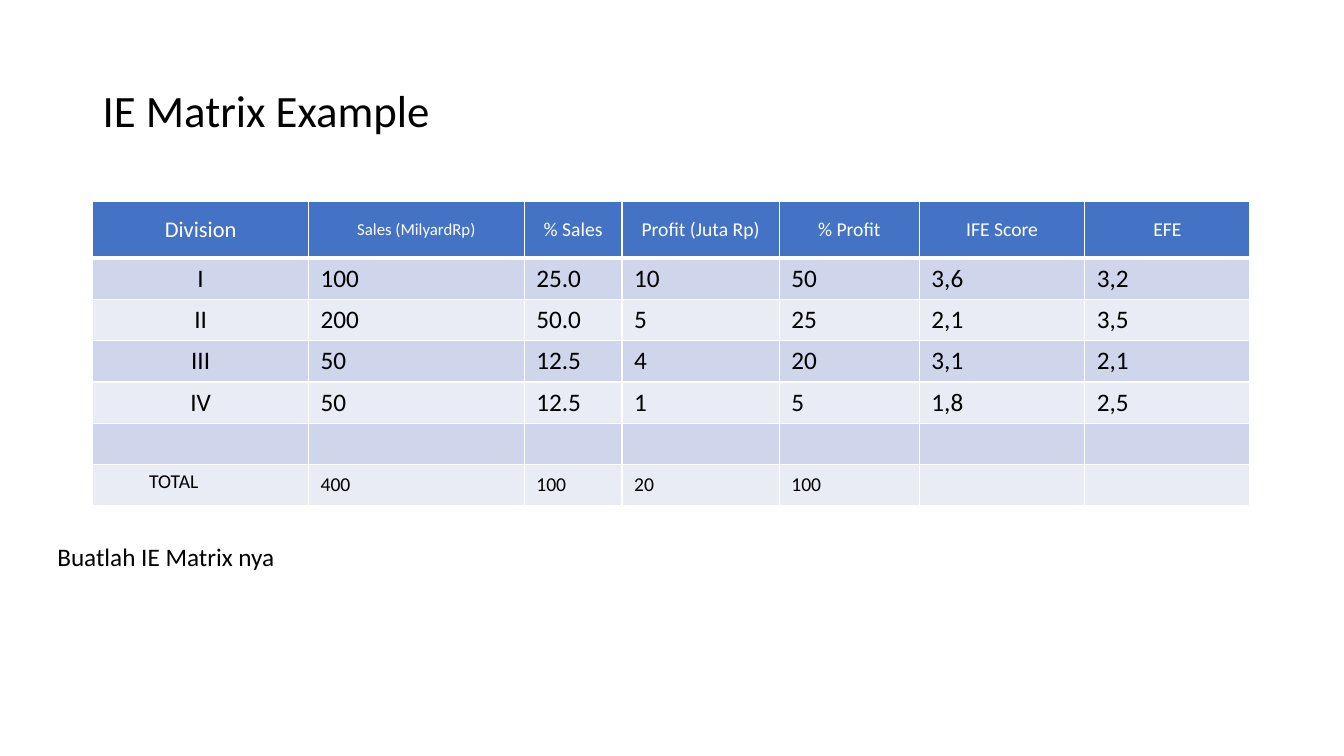
"""Build the IE Matrix example slide with its division table."""
import pptx
import pptx.dml.color
import pptx.enum.text
import pptx.oxml
import pptx.oxml.ns
import pptx.util

Inches = pptx.util.Inches
Pt = pptx.util.Pt
RGBColor = pptx.dml.color.RGBColor
ALIGN = pptx.enum.text.PP_ALIGN
ANCHOR = pptx.enum.text.MSO_ANCHOR

TITLE = "IE Matrix Example"
TASK = "Buatlah IE Matrix nya"
HEADINGS = ["Division", "Sales (MilyardRp)", "% Sales", "Profit (Juta Rp)",
            "% Profit", "IFE Score", "EFE"]
HEADING_SIZES = [16, 12, 14, 14, 14, 14, 14]
DIVISIONS = [
    ["I", "100", "25.0", "10", "50", "3,6", "3,2"],
    ["II", "200", "50.0", "5", "25", "2,1", "3,5"],
    ["III", "50", "12.5", "4", "20", "3,1", "2,1"],
    ["IV", "50", "12.5", "1", "5", "1,8", "2,5"],
]
SPACER = [""] * len(HEADINGS)
TOTALS = ["TOTAL", "400", "100", "20", "100", "", ""]
ROWS = [HEADINGS, *DIVISIONS, SPACER, TOTALS]
COLUMN_WIDTHS = [2.14, 2.14, 0.97, 1.56, 1.39, 1.64, 1.64]
HEADER_HEIGHT, ROW_HEIGHT = 0.56, 0.41
CELL_INSET, TOTAL_INSET = 0.12, 0.56

FONT = "Calibri"
BLACK = RGBColor(0x00, 0x00, 0x00)
WHITE = RGBColor(0xFF, 0xFF, 0xFF)
HEADER_BLUE = RGBColor(0x44, 0x72, 0xC4)
BANDS = [RGBColor(0xE9, 0xEB, 0xF5), RGBColor(0xCF, 0xD5, 0xEA)]


def style(paragraph, size, color):
    """Apply the slide font to every run of a paragraph."""
    for run in paragraph.runs:
        run.font.name = FONT
        run.font.size = Pt(size)
        run.font.color.rgb = color


def add_label(slide, text, box, size, wrap, anchor):
    """Add one line of free-standing text."""
    frame = slide.shapes.add_textbox(*map(Inches, box)).text_frame
    frame.word_wrap = wrap
    frame.vertical_anchor = anchor
    frame.text = text
    style(frame.paragraphs[0], size, BLACK)
    return frame


def add_borders(cell, bottom_width):
    """Draw white borders around a cell."""
    properties = cell._tc.get_or_add_tcPr()
    widths = {"lnL": 1, "lnR": 1, "lnT": 1, "lnB": bottom_width}
    for position, (side, width) in enumerate(widths.items()):
        border = pptx.oxml.parse_xml(
            f'<a:{side} {pptx.oxml.ns.nsdecls("a")} w="{Pt(width)}">'
            f'<a:solidFill><a:srgbClr val="{WHITE}"/></a:solidFill></a:{side}>')
        properties.insert(position, border)


def fill_cell(cell, text, row, column):
    """Write and format one cell according to its row and column."""
    is_header, is_total = row == 0, row == len(ROWS) - 1
    is_total_label = is_total and column == 0
    cell.fill.solid()
    cell.fill.fore_color.rgb = HEADER_BLUE if is_header else BANDS[row % 2]
    add_borders(cell, 3 if is_header else 1)
    cell.margin_left = Inches(TOTAL_INSET if is_total_label else CELL_INSET)
    cell.margin_right = Inches(CELL_INSET)
    cell.vertical_anchor = ANCHOR.TOP if is_total_label else ANCHOR.MIDDLE
    cell.text_frame.text = text
    paragraph = cell.text_frame.paragraphs[0]
    centered = is_header or (column == 0 and not is_total)
    paragraph.alignment = ALIGN.CENTER if centered else ALIGN.LEFT
    size = HEADING_SIZES[column] if is_header else 14 if is_total else 18
    style(paragraph, size, WHITE if is_header else BLACK)


def add_matrix(slide):
    """Add the table of divisions."""
    heights = [HEADER_HEIGHT] + [ROW_HEIGHT] * (len(ROWS) - 1)
    matrix = slide.shapes.add_table(
        len(ROWS), len(HEADINGS), Inches(0.92), Inches(2),
        Inches(sum(COLUMN_WIDTHS)), Inches(sum(heights))).table
    for column, width in zip(matrix.columns, COLUMN_WIDTHS):
        column.width = Inches(width)
    for row, height in zip(matrix.rows, heights):
        row.height = Inches(height)
    for row, texts in enumerate(ROWS):
        for column, text in enumerate(texts):
            fill_cell(matrix.cell(row, column), text, row, column)


def main():
    """Assemble and save the slide."""
    deck = pptx.Presentation()
    deck.slide_width, deck.slide_height = Inches(13.33), Inches(7.5)
    slide = deck.slides.add_slide(deck.slide_layouts[6])
    title = add_label(slide, TITLE, (0.92, 0.4, 11.5, 1.45), 32, True, ANCHOR.MIDDLE)
    title.paragraphs[0].line_spacing = 0.9
    add_matrix(slide)
    task = add_label(slide, TASK, (0.47, 5.32, 2.38, 0.4), 18, False, ANCHOR.TOP)
    task.auto_size = pptx.enum.text.MSO_AUTO_SIZE.SHAPE_TO_FIT_TEXT
    deck.save("out.pptx")


if __name__ == "__main__":
    main()
